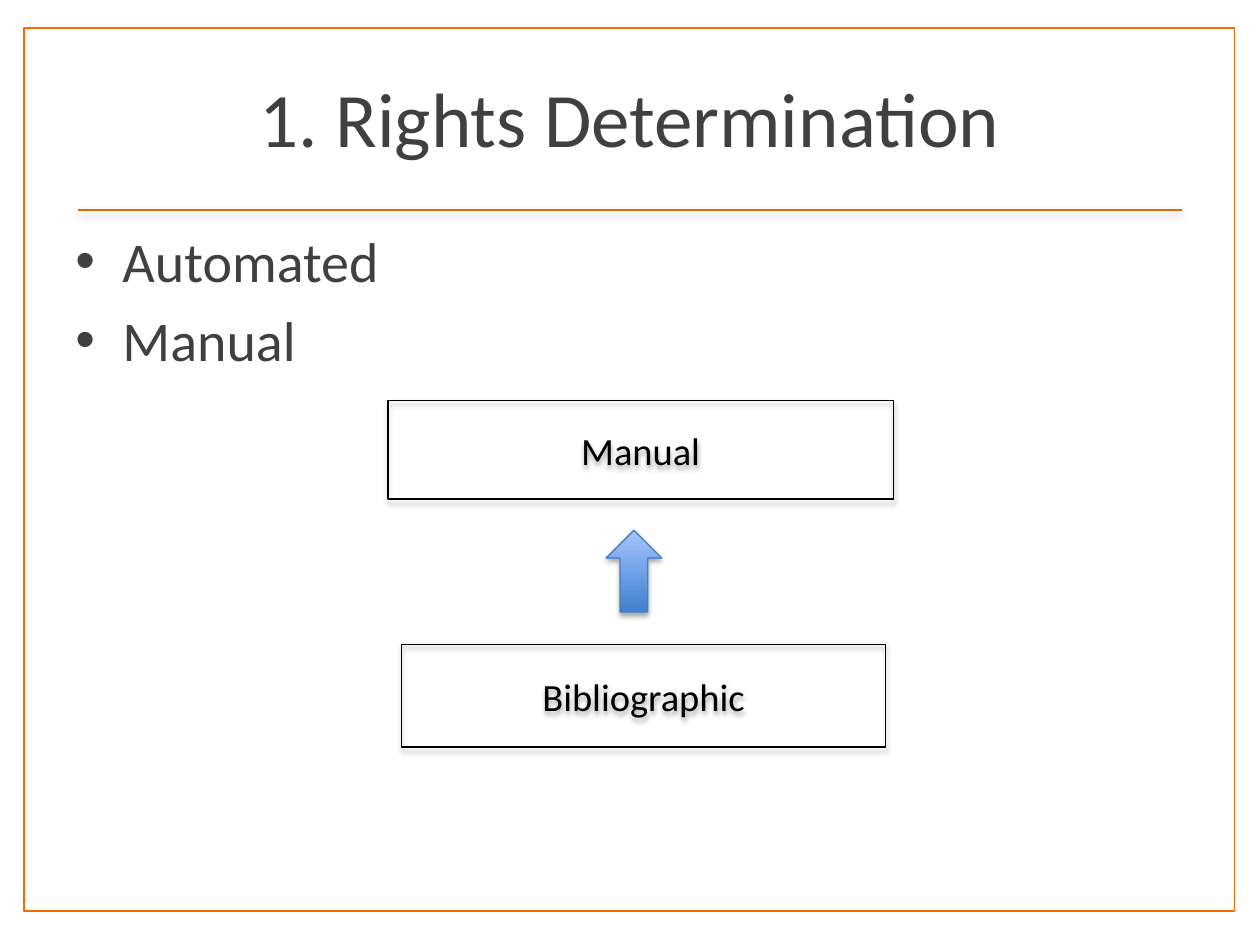
from dataclasses import dataclass

from lxml import etree
from pptx import Presentation
from pptx.dml.color import RGBColor
from pptx.enum.shapes import MSO_CONNECTOR, MSO_SHAPE
from pptx.enum.text import MSO_ANCHOR, PP_ALIGN
from pptx.oxml.ns import qn
from pptx.util import Cm, Pt

RECTANGLE = MSO_SHAPE.RECTANGLE
UP_ARROW = MSO_SHAPE.UP_ARROW
STRAIGHT = MSO_CONNECTOR.STRAIGHT
TOP, MIDDLE = MSO_ANCHOR.TOP, MSO_ANCHOR.MIDDLE
LEFT, CENTER = PP_ALIGN.LEFT, PP_ALIGN.CENTER


@dataclass(frozen=True)
class Theme:
    font: str = "Calibri"
    title_size: float = 44
    bullet_size: float = 32
    label_size: float = 22
    text: str = "404040"
    black: str = "000000"
    white: str = "FFFFFF"
    frame: str = "FF6600"
    rule: str = "D57007"
    arrow_line: str = "4B7EBC"
    arrow_bottom: str = "3F80CE"
    arrow_top: str = "A4C4FF"


THEME = Theme()


def colour(value):
    return RGBColor.from_string(value)


def set_line(shape, value, width):
    shape.line.color.rgb = colour(value)
    shape.line.width = Pt(width)


def add_shadow(shape, blur):
    """Give a soft shadow straight below; call it after fill and line are set."""
    effects = etree.SubElement(shape._element.spPr, qn("a:effectLst"))
    shadow = etree.SubElement(effects, qn("a:outerShdw"), blurRad=str(Pt(blur)),
                              dist=str(Pt(1.8)), dir="5400000", rotWithShape="0")
    tint = etree.SubElement(shadow, qn("a:srgbClr"), val=THEME.black)
    etree.SubElement(tint, qn("a:alpha"), val="35000")


def write_text(shape, lines, size, value, anchor, align):
    frame = shape.text_frame
    frame.word_wrap = True
    frame.vertical_anchor = anchor
    frame.text = "\n".join(lines)
    for para in frame.paragraphs:
        para.alignment = align
        for span in para.runs:
            span.font.name = THEME.font
            span.font.size = Pt(size)
            span.font.color.rgb = colour(value)


def add_frame(page):
    frame = page.shapes.add_shape(RECTANGLE, Cm(0.48), Cm(0.56), Cm(24.41), Cm(17.81))
    frame.shadow.inherit = False
    frame.fill.solid()
    frame.fill.fore_color.rgb = colour(THEME.white)
    set_line(frame, THEME.frame, 1)


def add_rule(page):
    rule = page.shapes.add_connector(STRAIGHT, Cm(1.58), Cm(4.24), Cm(23.82), Cm(4.24))
    set_line(rule, THEME.rule, 1)
    add_shadow(rule, 5)


def add_title(page, title):
    box = page.shapes.add_textbox(Cm(1.27), Cm(0.76), Cm(22.86), Cm(3.18))
    write_text(box, [title], THEME.title_size, THEME.text, MIDDLE, CENTER)


def add_bullets(page, items):
    box = page.shapes.add_textbox(Cm(1.27), Cm(4.45), Cm(22.86), Cm(13.59))
    write_text(box, items, THEME.bullet_size, THEME.text, TOP, LEFT)
    indent = Cm(0.95)
    for index, para in enumerate(box.text_frame.paragraphs):
        if index:
            para.space_before = Pt(0.2 * THEME.bullet_size)
        properties = para._p.get_or_add_pPr()
        properties.set("marL", str(indent))
        properties.set("indent", str(-indent))
        etree.SubElement(properties, qn("a:buFont"), typeface="Arial")
        etree.SubElement(properties, qn("a:buChar"), char="•")


def add_label_box(page, label, left, top, width, height):
    box = page.shapes.add_shape(RECTANGLE, Cm(left), Cm(top), Cm(width), Cm(height))
    box.fill.background()
    set_line(box, THEME.black, 0.75)
    add_shadow(box, 3.1)
    write_text(box, [label], THEME.label_size, THEME.black, MIDDLE, CENTER)


def add_up_arrow(page):
    arrow = page.shapes.add_shape(UP_ARROW, Cm(12.22), Cm(10.69), Cm(1.12), Cm(1.65))
    arrow.fill.gradient()
    arrow.fill.gradient_angle = 90
    for stop, value in zip(arrow.fill.gradient_stops,
                           (THEME.arrow_bottom, THEME.arrow_top)):
        stop.color.rgb = colour(value)
    set_line(arrow, THEME.arrow_line, 0.75)
    add_shadow(arrow, 3.1)


def main():
    deck = Presentation()
    deck.slide_width, deck.slide_height = Cm(25.4), Cm(19.05)
    page = deck.slides.add_slide(deck.slide_layouts[6])
    add_frame(page)
    add_rule(page)
    add_title(page, "1. Rights Determination")
    add_bullets(page, ["Automated", "Manual"])
    add_label_box(page, "Bibliographic", 8.1, 13, 9.75, 2.06)
    add_label_box(page, "Manual", 7.82, 8.08, 10.19, 1.98)
    add_up_arrow(page)
    deck.save("out.pptx")


if __name__ == "__main__":
    main()
